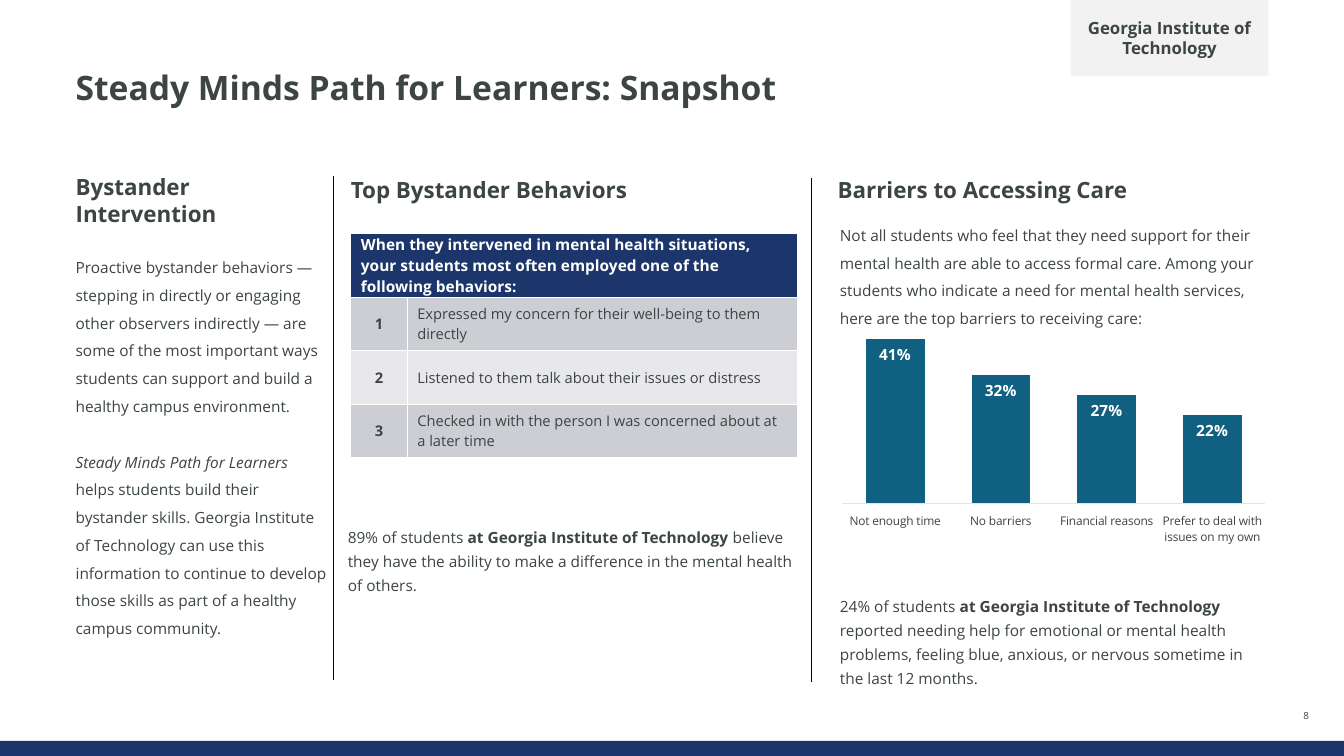
"""Builds the student support program snapshot slide."""
from lxml import etree
from pptx import Presentation
from pptx.chart.data import CategoryChartData
from pptx.dml.color import RGBColor
from pptx.enum.chart import XL_CHART_TYPE, XL_LABEL_POSITION, XL_TICK_LABEL_POSITION, XL_TICK_MARK
from pptx.enum.shapes import MSO_CONNECTOR, MSO_SHAPE
from pptx.enum.text import MSO_ANCHOR, PP_ALIGN
from pptx.oxml import parse_xml
from pptx.oxml.ns import nsdecls, qn
from pptx.util import Inches, Pt

COLORS = {
    "navy": "1C366B", "text": "3C4543", "white": "FFFFFF", "black": "000000",
    "tag": "F2F2F2", "bar": "106081", "axis": "E1E4E4",
    "dark_row": "CDCED4", "light_row": "E8E8EB",
}
FONT = "Open Sans"
PROGRAM = "Steady Minds Path for Learners"


def color(name):
    """Return the named palette colour."""
    return RGBColor.from_string(COLORS[name])


def write(frame, paragraphs, size, bold=False, name="text", align=PP_ALIGN.LEFT,
          spacing=1.0, gap=0, margins=(0, 0)):
    """Fill a text frame with paragraphs of (text, style) runs."""
    frame.word_wrap = True
    frame.margin_left = frame.margin_right = Inches(margins[0])
    frame.margin_top = frame.margin_bottom = Inches(margins[1])
    for index, runs in enumerate(paragraphs):
        paragraph = frame.paragraphs[0] if index == 0 else frame.add_paragraph()
        paragraph.alignment = align
        paragraph.line_spacing = spacing
        paragraph.space_before = Pt(gap if index else 0)
        for text, style in runs:
            run = paragraph.add_run()
            run.text = text
            run.font.name = FONT
            run.font.size = Pt(size)
            run.font.bold = bold or style == "bold"
            run.font.italic = style == "italic"
            run.font.color.rgb = color(name)


presentation = Presentation()
presentation.slide_width = Inches(13.33)
presentation.slide_height = Inches(7.5)
slide = presentation.slides.add_slide(presentation.slide_layouts[5])
shapes = slide.shapes

title = shapes.title
title.left, title.top, title.width, title.height = [Inches(n) for n in (0.75, 0.71, 11.83, 0.7)]
title.text_frame.vertical_anchor = MSO_ANCHOR.TOP
write(title.text_frame, [[(f"{PROGRAM}: Snapshot", "")]], 24, bold=True, spacing=0.9)

rectangles = [((0, 7.35, 13.33, 0.15), "navy", ""),
              ((10.62, 0, 1.96, 0.75), "tag", "Georgia Institute of Technology")]
for place, fill, text in rectangles:
    rectangle = shapes.add_shape(MSO_SHAPE.RECTANGLE, *[Inches(n) for n in place])
    rectangle.shadow.inherit = False
    rectangle.fill.solid()
    rectangle.fill.fore_color.rgb = color(fill)
    rectangle.line.fill.background()
    if text:
        rectangle.text_frame.vertical_anchor = MSO_ANCHOR.MIDDLE
        write(rectangle.text_frame, [[(text, "")]], 12, bold=True, align=PP_ALIGN.CENTER, margins=(0.1, 0))

for x, top in ((3.31, 1.75), (8.05, 1.77)):
    divider = shapes.add_connector(MSO_CONNECTOR.STRAIGHT, Inches(x), Inches(top), Inches(x), Inches(top + 5))
    divider.line.color.rgb = color("black")
    divider.line.width = Pt(1)
    etree.SubElement(divider._element.spPr, qn("a:effectLst"))

headings = [((0.75, 1.72, 2.51, 0.56), "Bystander Intervention", (0, 0)),
            ((3.48, 1.75, 3.62, 0.39), "Top Bystander Behaviors", (0, 0)),
            ((8.21, 1.7, 3.62, 0.43), "Barriers to Accessing Care", (0.1, 0.05))]
for place, text, margins in headings:
    heading = shapes.add_textbox(*[Inches(n) for n in place])
    write(heading.text_frame, [[(text, "")]], 16, bold=True, margins=margins)

school = ("at Georgia Institute of Technology ", "bold")
bodies = [
    ((0.75, 2.47, 2.52, 3.96), 1.5, [
        [("Proactive bystander behaviors —stepping in directly or engaging other observers indirectly — are "
          "some of the most important ways students can support and build a healthy campus environment.", "")],
        [(PROGRAM, "italic"),
         (" helps students build their bystander skills. Georgia Institute of Technology can use this "
          "information to continue to develop those skills as part of a healthy campus community.", "")]]),
    ((3.45, 5.18, 4.43, 0.77), 1.3, [
        [("89% of students ", ""), school,
         ("believe they have the ability to make a difference in the mental health of others.", "")]]),
    ((8.33, 2.15, 4.25, 1.03), 1.5, [
        [("Not all students who feel that they need support for their mental health are able to access "
          "formal care. Among your students who indicate a need for mental health services, here are the "
          "top barriers to receiving care:", "")]]),
    ((8.33, 5.87, 4.25, 0.77), 1.3, [
        [("24% of students ", ""), school,
         ("reported needing help for emotional or mental health problems, feeling blue, anxious, or "
          "nervous sometime in the last 12 months.", "")]]),
]
for place, spacing, paragraphs in bodies:
    body = shapes.add_textbox(*[Inches(n) for n in place])
    write(body.text_frame, paragraphs, 11, spacing=spacing, gap=20)

page_number = shapes.add_textbox(Inches(12.7), Inches(7.01), Inches(0.51), Inches(0.15))
page_number.text_frame.vertical_anchor = MSO_ANCHOR.BOTTOM
write(page_number.text_frame, [[("8", "")]], 7, align=PP_ALIGN.CENTER)

behaviors = ["Expressed my concern for their well-being to them directly",
             "Listened to them talk about their issues or distress",
             "Checked in with the person I was concerned about at a later time"]
table = shapes.add_table(4, 2, Inches(3.48), Inches(2.32), Inches(4.43), Inches(2.22)).table
for column, width in zip(table.columns, (0.56, 3.87)):
    column.width = Inches(width)
for row, height in zip(table.rows, (0.63, 0.53, 0.53, 0.53)):
    row.height = Inches(height)
table.cell(0, 0).merge(table.cell(0, 1))
write(table.cell(0, 0).text_frame,
      [[("When they intervened in mental health situations, your students most often employed one of the "
         "following behaviors:", "")]], 11, bold=True, name="white")
for number, behavior in enumerate(behaviors, 1):
    write(table.cell(number, 0).text_frame, [[(str(number), "bold")]], 10.5, align=PP_ALIGN.CENTER)
    write(table.cell(number, 1).text_frame, [[(behavior, "")]], 10.5)
for row_index, fill in enumerate(("navy", "dark_row", "light_row", "dark_row")):
    for cell in table.rows[row_index].cells:
        cell.vertical_anchor = MSO_ANCHOR.MIDDLE
        cell.margin_left = cell.margin_right = Inches(0.1)
        cell.margin_top = cell.margin_bottom = Inches(0.05 if row_index else 0)
        properties = cell._tc.get_or_add_tcPr()
        for side in ("lnL", "lnR", "lnT", "lnB"):
            properties.append(parse_xml(
                f'<a:{side} {nsdecls("a")} w="{Pt(1)}"><a:solidFill>'
                f'<a:srgbClr val="{COLORS["white"]}"/></a:solidFill></a:{side}>'))
        cell.fill.solid()
        cell.fill.fore_color.rgb = color(fill)

barriers = CategoryChartData(number_format="0%")
barriers.categories = ["Not enough time", "No barriers", "Financial reasons", "Prefer to deal with issues on my own"]
barriers.add_series("Series 1", (0.41, 0.32, 0.27, 0.22))
chart = shapes.add_chart(XL_CHART_TYPE.COLUMN_CLUSTERED, Inches(8.29), Inches(3.21),
                         Inches(4.28), Inches(2.66), barriers).chart
chart.has_legend = False
chart.has_title = False
chart.font.name = "Lato"
chart.font.size = Pt(9)
chart.font.color.rgb = color("text")

category_axis = chart.category_axis
category_axis.major_tick_mark = XL_TICK_MARK.NONE
category_axis.tick_label_position = XL_TICK_LABEL_POSITION.LOW
category_axis.tick_labels.offset = 0
category_axis.tick_labels.font.name = FONT
category_axis.tick_labels.font.size = Pt(8.5)
category_axis.tick_labels.font.color.rgb = color("text")
category_axis.format.line.color.rgb = color("axis")
category_axis.format.line.width = Pt(0.75)
value_axis = chart.value_axis
value_axis.minimum_scale = 0
value_axis.maximum_scale = 0.45
value_axis.has_major_gridlines = False
value_axis.visible = False

plot = chart.plots[0]
plot.gap_width = 80
plot.vary_by_categories = False
bars = plot.series[0]
bars.format.fill.solid()
bars.format.fill.fore_color.rgb = color("bar")
labels = bars.data_labels
labels.show_value = True
labels.position = XL_LABEL_POSITION.INSIDE_END
labels.number_format = "0%"
labels.number_format_is_linked = False
labels.font.name = FONT
labels.font.size = Pt(11)
labels.font.bold = True
labels.font.color.rgb = color("white")

plot_area = chart._chartSpace.chart.plotArea
for old_layout in plot_area.findall(qn("c:layout")):
    plot_area.remove(old_layout)
plot_area.insert(0, parse_xml(
    f'<c:layout {nsdecls("c")}><c:manualLayout><c:layoutTarget val="inner"/>'
    '<c:xMode val="edge"/><c:yMode val="edge"/><c:x val="0.015"/><c:y val="0"/>'
    '<c:w val="0.98"/><c:h val="0.67"/></c:manualLayout></c:layout>'))

presentation.save("out.pptx")
